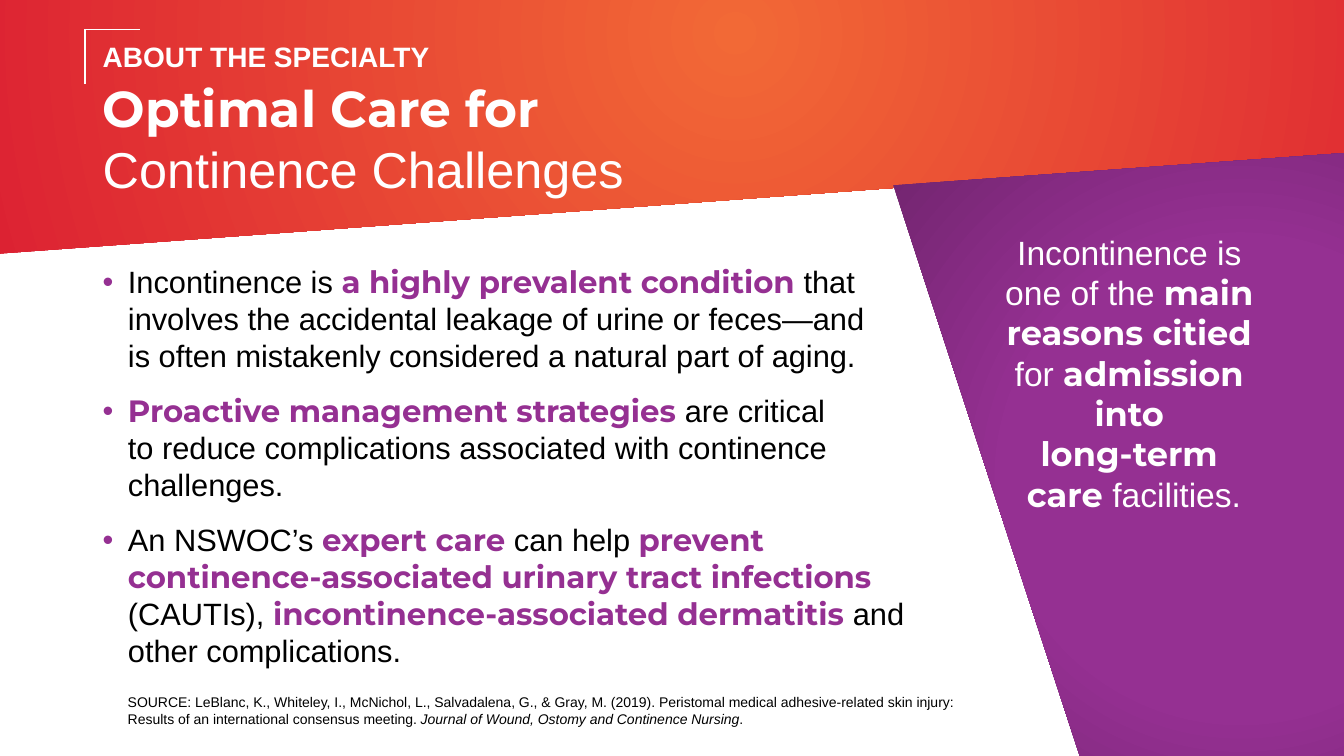
from copy import deepcopy

from lxml import etree
from pptx import Presentation
from pptx.dml.color import RGBColor
from pptx.enum import shapes as kinds, text as txt
from pptx.oxml import ns
from pptx.util import Pt

WHITE = RGBColor(0xFF, 0xFF, 0xFF)
BLACK = RGBColor(0, 0, 0)
ORANGE = RGBColor(0xF2, 0x69, 0x36)
RED = RGBColor(0xDA, 0x1A, 0x32)
PURPLE = RGBColor(0x95, 0x30, 0x92)
PLUM = RGBColor(0x70, 0x24, 0x6D)
PLAIN, STRONG = "Arial", "Montserrat"


def add_xml(parent, tag, **attributes):
    """Append a drawing element to its parent."""
    return etree.SubElement(parent, ns.qn(tag), attributes)


def write(paragraph, content, size, color, font=PLAIN, bold=False, italic=False):
    """Add formatted text, turning newlines into line breaks."""
    for index, line in enumerate(content.split("\n")):
        if index:
            paragraph.add_line_break()
            paragraph._p[-1].append(deepcopy(run._r.rPr))
        run = paragraph.add_run()
        run.text = line
        face = run.font
        face.size, face.name = Pt(size), font
        face.bold, face.italic = bold, italic
        face.color.rgb = color


def space(paragraph, size, before=0, after=0, align=txt.PP_ALIGN.LEFT):
    """Set the leading, gaps and alignment of a paragraph."""
    paragraph.line_spacing = Pt(size * 1.2)
    paragraph.space_before, paragraph.space_after = Pt(before), Pt(after)
    paragraph.alignment = align


def place(shape, box):
    """Move a shape to a box given in points."""
    shape.left, shape.top, shape.width, shape.height = map(Pt, box)


def set_frame(frame, fit=txt.MSO_AUTO_SIZE.NONE, anchor=txt.MSO_ANCHOR.TOP):
    """Wrap a text frame and set its insets."""
    frame.word_wrap, frame.auto_size, frame.vertical_anchor = True, fit, anchor
    frame.margin_left = frame.margin_right = Pt(7.2)
    frame.margin_top = frame.margin_bottom = Pt(3.6)


def add_text_box(slide, box):
    """Add a wrapping text box and return its first paragraph."""
    frame = slide.shapes.add_textbox(*map(Pt, box)).text_frame
    set_frame(frame, fit=txt.MSO_AUTO_SIZE.SHAPE_TO_FIT_TEXT)
    return frame.paragraphs[0]


def add_band(slide, box, kind, angle, stops):
    """Add a rotated shape with a radial gradient."""
    band = slide.shapes.add_shape(kind, *map(Pt, box))
    band.rotation = angle
    band.shadow.inherit = False
    band.line.fill.background()
    band.fill.gradient()
    for stop, (position, color) in zip(band.fill.gradient_stops, stops):
        stop.color.rgb, stop.position = color, position
    gradient = band._element.spPr.find(ns.qn("a:gradFill"))
    gradient.remove(gradient.find(ns.qn("a:lin")))
    path = add_xml(gradient, "a:path", path="circle")
    add_xml(path, "a:fillToRect", l="50000", t="50000", r="50000", b="50000")
    return band


def add_header(slide, box):
    """Place the orange band behind everything else."""
    band = add_band(slide, box, kinds.MSO_SHAPE.RECTANGLE, 265.8,
                    [(0, ORANGE), (1, RED)])
    slide.shapes._spTree.insert(2, band._element)


def add_title(slide, box):
    """Fill the title and draw its corner bracket."""
    title = slide.shapes.title
    place(title, box)
    frame = title.text_frame
    set_frame(frame, anchor=txt.MSO_ANCHOR.MIDDLE)
    kicker, heading = frame.paragraphs[0], frame.add_paragraph()
    space(kicker, 20, after=3)
    write(kicker, "ABOUT THE SPECIALTY", 20, WHITE, bold=True)
    space(heading, 36)
    write(heading, "Optimal Care for \n", 36, WHITE, font=STRONG, bold=True)
    write(heading, "Continence Challenges", 36, WHITE)

    x, y, arm = box[0] - 5.5, box[1] + 6.5, 39
    for end_x, end_y in ((x + arm, y), (x, y + arm)):
        bracket = slide.shapes.add_connector(
            kinds.MSO_CONNECTOR.STRAIGHT, Pt(x), Pt(y), Pt(end_x), Pt(end_y))
        bracket.line.color.rgb, bracket.line.width = WHITE, Pt(1)
        add_xml(bracket._element.spPr, "a:effectLst")


def add_points(slide, box):
    """Fill the body with bullets whose key phrases stand out."""
    points = [
        [("Incontinence is ", False), ("a highly prevalent condition ", True),
         ("that involves the accidental leakage of urine or feces—and \n"
          "is often mistakenly considered a natural part of aging.", False)],
        [("Proactive management strategies ", True),
         ("are critical \nto reduce complications associated with continence "
          "challenges.", False)],
        [("An NSWOC’s ", False), ("expert care ", True), ("can help ", False),
         ("prevent continence-associated urinary tract infections ", True),
         ("(CAUTIs), ", False), ("incontinence-associated dermatitis ", True),
         ("and other complications.", False)],
    ]
    body = slide.placeholders[1]
    place(body, box)
    frame = body.text_frame
    set_frame(frame)
    for index, phrases in enumerate(points):
        point = frame.add_paragraph() if index else frame.paragraphs[0]
        space(point, 22, before=10, after=3)
        properties = point._p.get_or_add_pPr()
        properties.set("marL", str(Pt(18)))
        properties.set("indent", str(-Pt(18)))
        add_xml(add_xml(properties, "a:buClr"), "a:srgbClr", val=str(PURPLE))
        add_xml(properties, "a:buFont", typeface=PLAIN)
        add_xml(properties, "a:buChar", char="•")
        for phrase, key in phrases:
            write(point, phrase, 22, PURPLE if key else BLACK,
                  font=STRONG if key else PLAIN, bold=key)


def add_source(slide, box):
    """Write the citation."""
    citation = add_text_box(slide, box)
    space(citation, 10, before=3, after=3)
    write(citation, "SOURCE: LeBlanc, K., Whiteley, I., McNichol, L., Salvadalena, G., "
          "& Gray, M. (2019). Peristomal medical adhesive-related skin injury: "
          "Results of an international consensus meeting. ", 10, BLACK)
    write(citation, "Journal of Wound, Ostomy and Continence Nursing", 10, BLACK,
          italic=True)
    write(citation, ".", 10, BLACK)


def add_callout(slide, box):
    """Place the purple panel and the statement on it."""
    x, y, width, height = box
    panel = add_band(slide, box, kinds.MSO_SHAPE.TRAPEZOID, 175.9,
                     [(0.48, PURPLE), (1, PLUM)])
    panel.adjustments[0] = 0.249
    statement = add_text_box(slide, (x + 26.6, y + 46.8, 259.2, 211))
    space(statement, 24, align=txt.PP_ALIGN.CENTER)
    for phrase, key in (("Incontinence is \none of the ", False),
                        ("main \nreasons citied \n", True), ("for ", False),
                        ("admission \ninto \nlong-term \ncare ", True),
                        ("facilities.", False)):
        write(statement, phrase, 24, WHITE, font=STRONG if key else PLAIN, bold=key)


def main():
    """Build and save the slide."""
    deck = Presentation()
    deck.slide_width, deck.slide_height = Pt(960), Pt(540)
    slide = deck.slides.add_slide(deck.slide_layouts[1])
    add_header(slide, (406.8, -561.6, 236.9, 1170.7))
    add_title(slide, (66.2, 14.4, 828, 141.1))
    add_points(slide, (66.2, 184.3, 600.5, 351.4))
    add_source(slide, (84.2, 491.8, 637.9, 31.7))
    add_callout(slide, (653.8, 115.2, 465.1, 453.6))
    deck.save("out.pptx")


if __name__ == "__main__":
    main()
